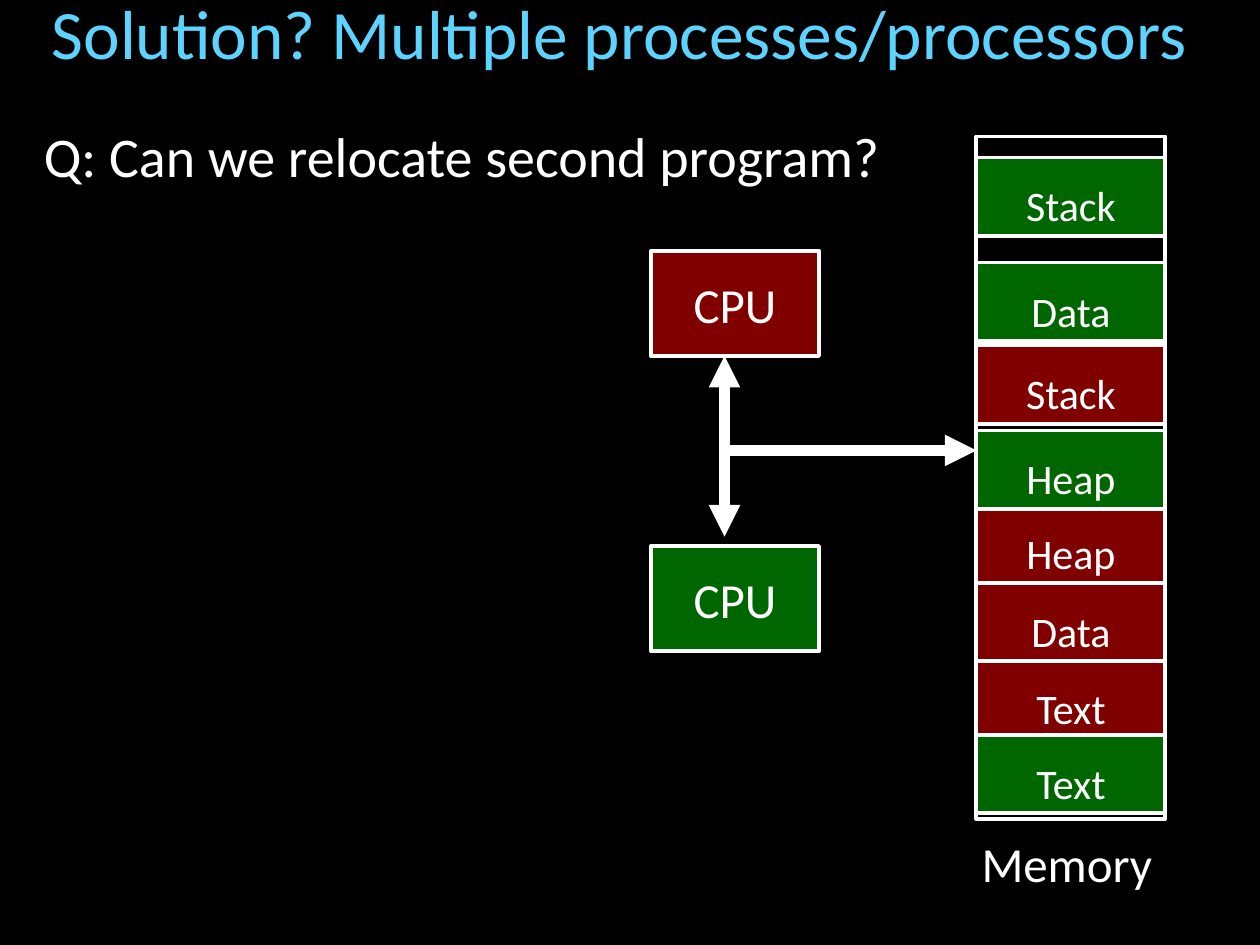
from dataclasses import dataclass

import pptx
import pptx.dml.color
import pptx.enum.shapes
import pptx.enum.text
import pptx.oxml
import pptx.oxml.ns
import pptx.util

COLORS = {
    "black": "000000",
    "white": "FFFFFF",
    "title": "5DD4FF",
    "first": "800000",
    "second": "006600",
}
FONT = "Calibri"
# The page is a grid of 120 columns by 90 rows, twelve to the inch
CELL = 1 / 12
MEMORY_LEFT, MEMORY_WIDTH = 93, 18
SEGMENT_HEIGHT = 7.45
BUS_COLUMN, BUS_ROW = 69, 42.9


@dataclass(frozen=True)
class Area:
    column: float
    row: float
    columns: float
    rows: float


@dataclass(frozen=True)
class Segment:
    label: str
    row: float
    program: str


@dataclass(frozen=True)
class Arrow:
    column: float
    row: float


CPUS = [
    (Area(62, 23.9, 16, 10), "first"),
    (Area(62, 52, 16, 10), "second"),
]
SEGMENTS = [
    Segment("Text", 62.9, "first"),
    Segment("Data", 55.5, "first"),
    Segment("Stack", 32.9, "first"),
    Segment("Heap", 48.1, "first"),
    Segment("Text", 70, "second"),
    Segment("Data", 25, "second"),
    Segment("Stack", 15, "second"),
    Segment("Heap", 41, "second"),
]
ARROW_ENDS = [
    Arrow(MEMORY_LEFT, BUS_ROW),
    Arrow(BUS_COLUMN, 33.9),
    Arrow(BUS_COLUMN, 51.1),
]


def grid(cells: float) -> int:
    return pptx.util.Inches(cells * CELL)


def bounds(area: Area) -> tuple:
    return tuple(grid(n) for n in (area.column, area.row, area.columns, area.rows))


def color(name: str) -> pptx.dml.color.RGBColor:
    return pptx.dml.color.RGBColor.from_string(COLORS[name])


def write(box, text: str, *, size: float, tint: str = "white", align: str = "CENTER",
          anchor: str = "MIDDLE", spacing: float = 1.0, wrap: bool = True) -> None:
    frame = box.text_frame
    frame.word_wrap = wrap
    frame.vertical_anchor = pptx.enum.text.MSO_ANCHOR[anchor]
    para = frame.paragraphs[0]
    para.alignment = pptx.enum.text.PP_ALIGN[align]
    para.line_spacing = spacing
    span = para.add_run()
    span.text = text
    span.font.name = FONT
    span.font.size = pptx.util.Pt(size)
    span.font.color.rgb = color(tint)


def add_text(page, area: Area, text: str, **text_format) -> None:
    write(page.shapes.add_textbox(*bounds(area)), text, **text_format)


def add_box(page, area: Area, fill: str | None = None):
    box = page.shapes.add_shape(pptx.enum.shapes.MSO_SHAPE.RECTANGLE, *bounds(area))
    box.shadow.inherit = False
    if fill:
        box.fill.solid()
        box.fill.fore_color.rgb = color(fill)
    else:
        box.fill.background()
    box.line.color.rgb = color("white")
    box.line.width = pptx.util.Pt(2.25)
    return box


def add_arrow(page, end: Arrow) -> None:
    arrow = page.shapes.add_connector(
        pptx.enum.shapes.MSO_CONNECTOR.STRAIGHT,
        grid(BUS_COLUMN), grid(BUS_ROW), grid(end.column), grid(end.row),
    )
    arrow.line.color.rgb = color("white")
    arrow.line.width = pptx.util.Pt(6)
    head = pptx.oxml.parse_xml(
        f'<a:tailEnd {pptx.oxml.ns.nsdecls("a")} type="triangle"/>')
    arrow.line._get_or_add_ln().append(head)
    arrow._element.spPr.append(
        pptx.oxml.parse_xml(f'<a:effectLst {pptx.oxml.ns.nsdecls("a")}/>'))


def main() -> None:
    deck = pptx.Presentation()
    deck.slide_width = grid(120)
    deck.slide_height = grid(90)
    page = deck.slides.add_slide(deck.slide_layouts[6])
    page.background.fill.solid()
    page.background.fill.fore_color.rgb = color("black")

    # Heading and question
    add_text(page, Area(-2, 0, 122, 6), "Solution? Multiple processes/processors",
             size=39.6, tint="title")
    add_text(page, Area(3, 11, 114, 74), "Q: Can we relocate second program?",
             size=32, align="LEFT", anchor="TOP")

    # Processors
    for area, program in CPUS:
        write(add_box(page, area, program), "CPU", size=28)

    # Memory column, with the bus arrows beneath its segments
    add_box(page, Area(MEMORY_LEFT, 13, MEMORY_WIDTH, 65))
    for end in ARROW_ENDS:
        add_arrow(page, end)
    for segment in SEGMENTS:
        area = Area(MEMORY_LEFT, segment.row, MEMORY_WIDTH, SEGMENT_HEIGHT)
        write(add_box(page, area, segment.program), segment.label, size=24, spacing=1.34)
    add_text(page, Area(92.2, 76.9, 18.8, 8.2), "Memory", size=28, anchor="TOP",
             spacing=1.34, wrap=False)

    deck.save("out.pptx")


if __name__ == "__main__":
    main()
